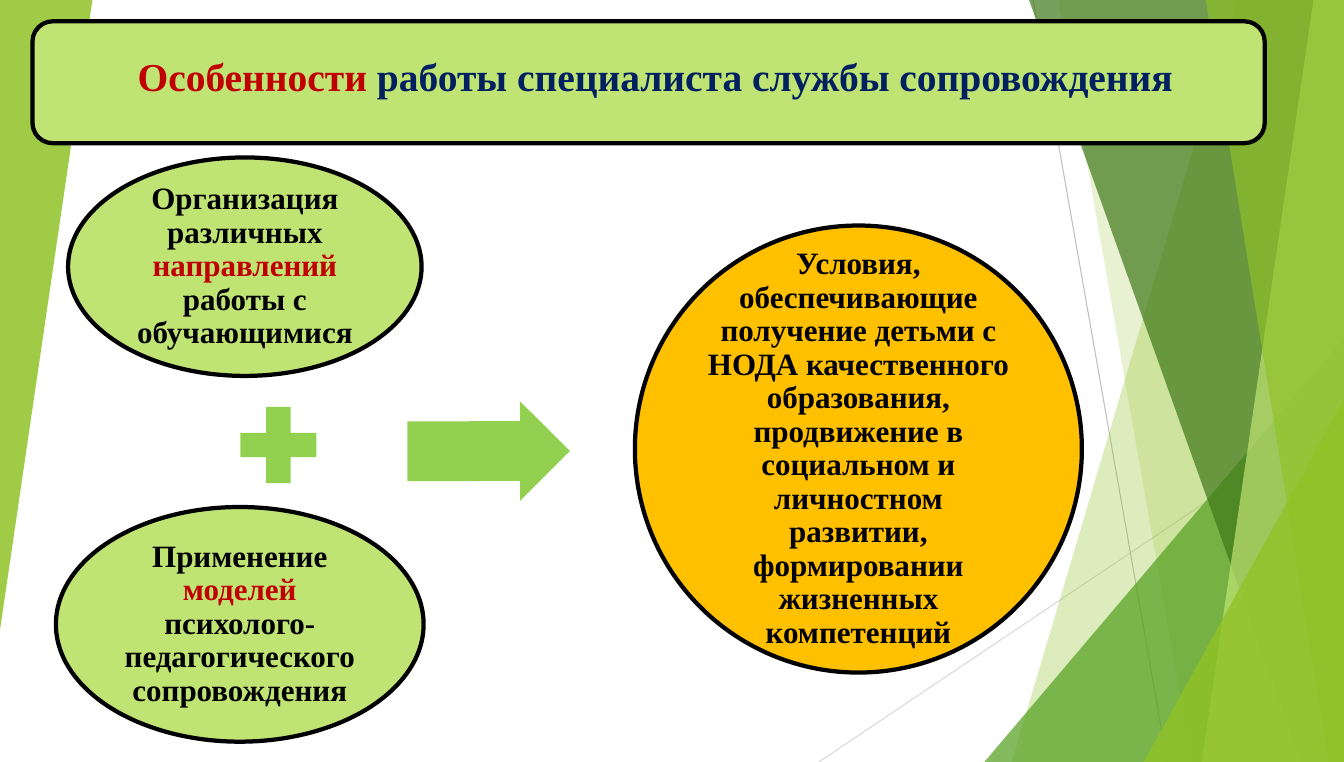
from lxml.etree import SubElement
from pptx import Presentation
from pptx.dml.color import RGBColor
from pptx.enum.shapes import MSO_CONNECTOR, MSO_SHAPE
from pptx.enum.text import MSO_ANCHOR, PP_ALIGN
from pptx.oxml.ns import qn
from pptx.util import Inches, Pt

COLORS = {
    "white": "FFFFFF", "black": "000000", "red": "C00000", "navy": "002060",
    "lime": "C0E474", "amber": "FFC000", "sign": "92D050",
    "leaf": "90C226", "grass": "54A021", "forest": "3F7819",
    "gray": "BFBFBF", "pale": "D9D9D9",
}
COLS, ROWS = 132.3, 75


class Deck:
    font = "Times New Roman"
    outline = 3

    def __init__(self, width, height):
        self.prs = Presentation()
        self.prs.slide_width, self.prs.slide_height = Inches(width), Inches(height)
        self.s = self.prs.slides.add_slide(self.prs.slide_layouts[6])
        fill = self.s.background.fill
        fill.solid()
        fill.fore_color.rgb = self.color("white")

    def color(self, name):
        return RGBColor.from_string(COLORS[name])

    def x(self, col):
        return round(self.prs.slide_width * col / COLS)

    def y(self, row):
        return round(self.prs.slide_height * row / ROWS)

    def paint(self, sp, fill, alpha=100, outlined=False):
        sp.shadow.inherit = False
        sp.fill.solid()
        sp.fill.fore_color.rgb = self.color(fill)
        if alpha < 100:
            clr = sp.fill._xPr.find(qn("a:solidFill"))[0]
            SubElement(clr, qn("a:alpha"), val=str(alpha * 1000))
        if outlined:
            sp.line.color.rgb = self.color("black")
            sp.line.width = Pt(self.outline)
        else:
            sp.line.fill.background()
        return sp

    def line(self, start, end, color):
        ln = self.s.shapes.add_connector(
            MSO_CONNECTOR.STRAIGHT, self.x(start[0]), self.y(start[1]),
            self.x(end[0]), self.y(end[1]))
        ln.line.color.rgb = self.color(color)
        ln.line.width = Pt(0.75)
        SubElement(ln._element.spPr, qn("a:effectLst"))

    def shard(self, top_left, top_right, bottom_left, fill, alpha):
        pts = [(self.x(c), self.y(r)) for c, r in (
            (top_left, 0), (top_right, 0), (COLS, ROWS), (bottom_left, ROWS))]
        if top_right == COLS:
            pts.insert(2, (self.x(COLS), self.y(0)))
        fb = self.s.shapes.build_freeform(*pts[0])
        fb.add_line_segments(pts[1:], close=True)
        self.paint(fb.convert_to_shape(), fill, alpha)

    def shape(self, kind, box, fill, alpha=100, outlined=False, adj=(), rotation=0):
        c, r, w, h = box
        sp = self.s.shapes.add_shape(kind, self.x(c), self.y(r), self.x(w), self.y(h))
        for i, value in enumerate(adj):
            sp.adjustments[i] = value
        sp.rotation = rotation
        return self.paint(sp, fill, alpha, outlined)

    def label(self, kind, box, fill, runs, size=22, spacing=0.9, margins=(0.03,) * 4):
        tf = self.shape(kind, box, fill, outlined=True).text_frame
        left, top, right, bottom = map(Inches, margins)
        frame = {"word_wrap": True, "vertical_anchor": MSO_ANCHOR.MIDDLE,
                 "margin_left": left, "margin_top": top,
                 "margin_right": right, "margin_bottom": bottom}
        for name, value in frame.items():
            setattr(tf, name, value)
        p = tf.paragraphs[0]
        p.alignment, p.line_spacing = PP_ALIGN.CENTER, spacing
        for text, color in runs:
            r = p.add_run()
            r.text = text
            for name, value in {"name": self.font, "size": Pt(size), "bold": True}.items():
                setattr(r.font, name, value)
            r.font.color.rgb = self.color(color)


def main():
    d = Deck(13.23, 7.5)
    corner = {"kind": MSO_SHAPE.ISOSCELES_TRIANGLE, "adj": [1]}

    d.line((101.7, 0), (114.9, ROWS), "gray")
    d.line((COLS, 40.3), (80.6, ROWS), "pale")
    d.shard(121.8, COLS, 99.6, "leaf", 30)
    d.shard(104.2, COLS, 117.3, "leaf", 20)
    d.shape(box=(96.9, 33.3, 35.4, 41.7), fill="grass", alpha=72, **corner)
    d.shard(101.3, COLS, 128.1, "forest", 70)
    d.shard(129.3, COLS, 118.3, "lime", 70)
    d.shard(118.7, COLS, 130.8, "leaf", 65)
    d.shape(box=(112.6, 39.3, 19.7, 35.7), fill="leaf", alpha=80, **corner)
    d.shape(box=(0, 0, 9.1, 62), fill="leaf", alpha=85, rotation=180, **corner)

    d.label(MSO_SHAPE.OVAL, (6.7, 15.5, 34.8, 21.5), "lime", [
        ("Организация различных ", "black"), ("направлений ", "red"),
        ("работы с обучающимися", "black")])
    d.shape(MSO_SHAPE.MATH_PLUS, (22.3, 38.7, 10.2, 10.2), "sign")
    d.label(MSO_SHAPE.OVAL, (5.5, 49.9, 36.2, 23.1), "lime", [
        ("Применение ", "black"), ("моделей ", "red"),
        ("психолого-педагогического сопровождения", "black")])
    d.shape(MSO_SHAPE.RIGHT_ARROW, (40.1, 39.5, 16, 9.8), "sign",
            adj=[0.6, 0.5], rotation=359.9)
    d.label(MSO_SHAPE.OVAL, (62.5, 22.2, 44, 44), "amber", [
        ("Условия, обеспечивающие получение детьми с НОДА качественного "
         "образования, продвижение в социальном и личностном развитии, "
         "формировании жизненных компетенций", "black")])
    d.label(MSO_SHAPE.ROUNDED_RECTANGLE, (3.2, 2.1, 121.3, 12), "lime", [
        ("Особенности", "red"),
        (" работы специалиста службы сопровождения", "navy")],
        size=28, spacing=1, margins=(0.25, 0.12, 0.12, 0.24))

    d.prs.save("out.pptx")


if __name__ == "__main__":
    main()
